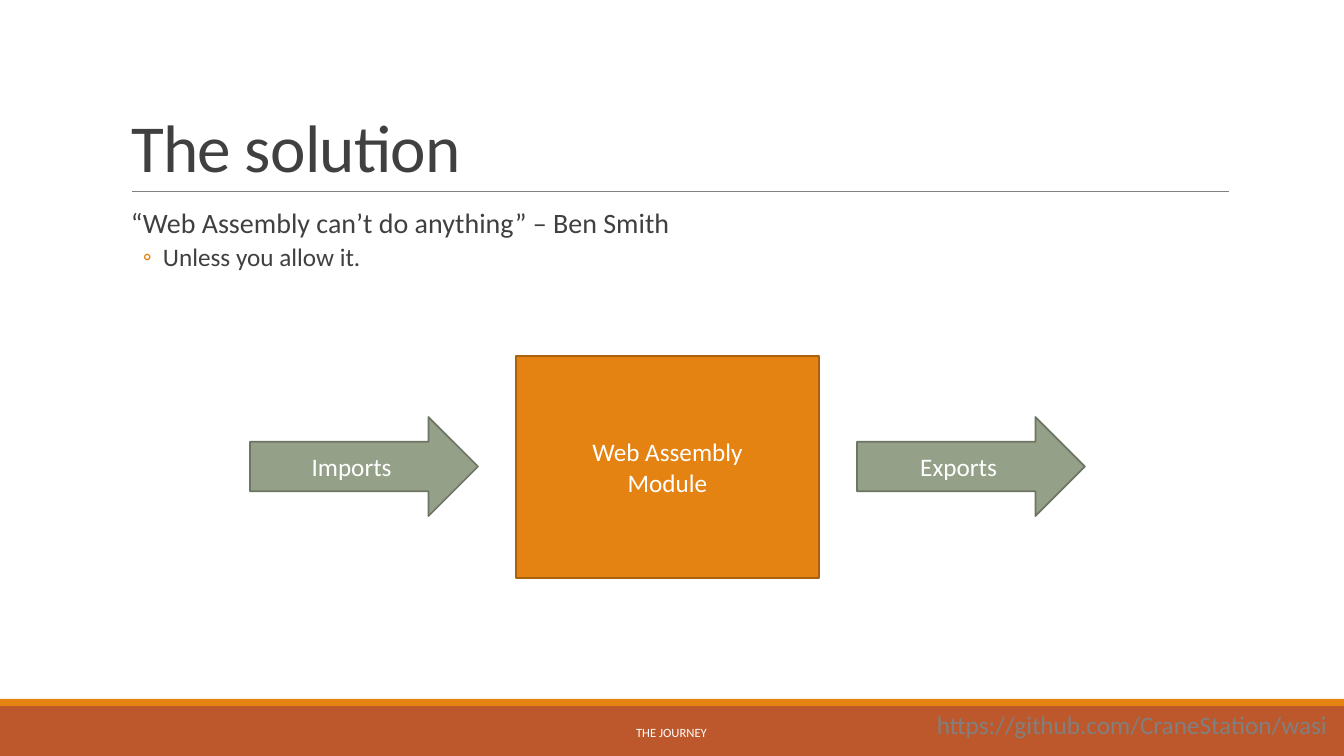
from lxml import etree
from pptx import Presentation
from pptx import util as u
from pptx.dml.color import RGBColor
from pptx.enum import shapes, text
from pptx.oxml.ns import qn

PX = 914400 / 100.8
PAGE_WIDTH, PAGE_HEIGHT = 1344, 756
FONT = "Calibri"
COLORS = {
    "ink": "404040",
    "white": "FFFFFF",
    "gray": "808080",
    "orange": "E48312",
    "orange_edge": "A9610D",
    "rust": "BD582C",
    "sage": "94A088",
    "sage_edge": "6D7665",
}


def px(*lengths):
    return [u.Emu(round(length * PX)) for length in lengths]


def rgb(name):
    return RGBColor.from_string(COLORS[name])


def move(shape, box):
    shape.left, shape.top, shape.width, shape.height = px(*box)


def style(para, size, color, align=text.PP_ALIGN.LEFT):
    para.alignment = align
    para.font.name = FONT
    para.font.size = u.Pt(size)
    para.font.color.rgb = rgb(color)


def set_bullet(para, left, indent, char=None):
    """Set the indents in px, and an orange bullet or none."""
    props = para._p.get_or_add_pPr()
    for key, length in zip(("marL", "indent"), px(left, indent)):
        props.set(key, str(length))
    if char is None:
        etree.SubElement(props, qn("a:buNone"))
        return
    color = etree.SubElement(props, qn("a:buClr"))
    etree.SubElement(color, qn("a:srgbClr")).set("val", COLORS["orange"])
    etree.SubElement(props, qn("a:buFont")).set("typeface", FONT)
    etree.SubElement(props, qn("a:buChar")).set("char", char)


def add_block(page, kind, box, fill, edge=None, lines=()):
    block = page.shapes.add_shape(kind, *px(*box))
    block.shadow.inherit = False
    block.fill.solid()
    block.fill.fore_color.rgb = rgb(fill)
    if edge:
        block.line.color.rgb = rgb(edge)
        block.line.width = u.Pt(1.25)
    else:
        block.line.fill.background()
    if lines:
        frame = block.text_frame
        frame.vertical_anchor = text.MSO_ANCHOR.MIDDLE
        frame.text = "\n".join(lines)
        for para in frame.paragraphs:
            style(para, 18, "white", text.PP_ALIGN.CENTER)


def add_label(page, box, words, size, color, align):
    label = page.shapes.add_textbox(*px(*box))
    frame = label.text_frame
    frame.word_wrap = True
    frame.vertical_anchor = text.MSO_ANCHOR.MIDDLE
    frame.text = words
    style(frame.paragraphs[0], size, color, align)


def add_title(page, box, words):
    left, top, width, height = box
    title = page.shapes.title
    move(title, box)
    frame = title.text_frame
    frame.auto_size = text.MSO_AUTO_SIZE.NONE
    frame.vertical_anchor = text.MSO_ANCHOR.BOTTOM
    frame.text = words
    para = frame.paragraphs[0]
    para.line_spacing = 0.85
    style(para, 48, "ink")
    para.font._element.set("spc", "-50")

    base = top + height
    rule = page.shapes.add_connector(
        shapes.MSO_CONNECTOR.STRAIGHT,
        *px(left + 11, base, left + width - 1, base))
    rule.line.color.rgb = rgb("gray")
    rule.line.width = u.Pt(0.5)
    etree.SubElement(rule._element.spPr, qn("a:effectLst"))


def add_body(page, box, statement, detail):
    body = page.placeholders[1]
    move(body, box)
    frame = body.text_frame
    frame.auto_size = text.MSO_AUTO_SIZE.NONE
    frame.margin_left = frame.margin_right = 0
    frame.text = f"{statement}\n{detail}"
    first, second = frame.paragraphs
    second.level = 1
    for para, before, after in ((first, 0, 2), (second, 2, 4)):
        para.line_spacing = 0.9
        para.space_before = u.Pt(before)
        para.space_after = u.Pt(after)
    set_bullet(first, 10, 0)
    set_bullet(second, 42, -20, "◦")
    style(first, 20, "ink")
    style(second, 18, "ink")


def add_module_flow(page, box):
    """Draw the module in the middle, with an arrow at each end of the box."""
    left, top, width, height = box
    module_width, arrow_width, arrow_height = 303, 228, 99
    module_left = left + (width - module_width) // 2
    arrow_top = top + (height - arrow_height) // 2
    add_block(page, shapes.MSO_SHAPE.RECTANGLE,
              (module_left, top, module_width, height),
              "orange", "orange_edge", ["Web Assembly", "Module"])
    for arrow_left, name in ((left, "Imports"),
                             (left + width - arrow_width, "Exports")):
        add_block(page, shapes.MSO_SHAPE.RIGHT_ARROW,
                  (arrow_left, arrow_top, arrow_width, arrow_height),
                  "sage", "sage_edge", [name])


def add_footer(page, box, name, link):
    left, top, width, height = box
    stripe = 7
    rectangle = shapes.MSO_SHAPE.RECTANGLE
    add_block(page, rectangle,
              (left, top + stripe, width, height - stripe), "rust")
    add_block(page, rectangle, (left, top, width, stripe), "orange")
    add_label(page, (left + 406, top + 14, 531, 40), name, 9, "white",
              text.PP_ALIGN.CENTER)
    add_label(page, (left + 917, top + 7, 420, 37), link, 18, "gray",
              text.PP_ALIGN.RIGHT)


def main():
    deck = Presentation()
    deck.slide_width, deck.slide_height = px(PAGE_WIDTH, PAGE_HEIGHT)
    page = deck.slides.add_slide(deck.slide_layouts[1])
    add_title(page, (121, 31, 1109, 160), "The solution")
    add_body(page, (121, 204, 1109, 444),
             "“Web Assembly can’t do anything” – Ben Smith",
             "Unless you allow it.")
    add_module_flow(page, (250, 356, 835, 222))
    add_footer(page, (0, 699, PAGE_WIDTH, 57), "THE JOURNEY",
               "https://github.com/CraneStation/wasi")
    deck.save("out.pptx")


if __name__ == "__main__":
    main()
